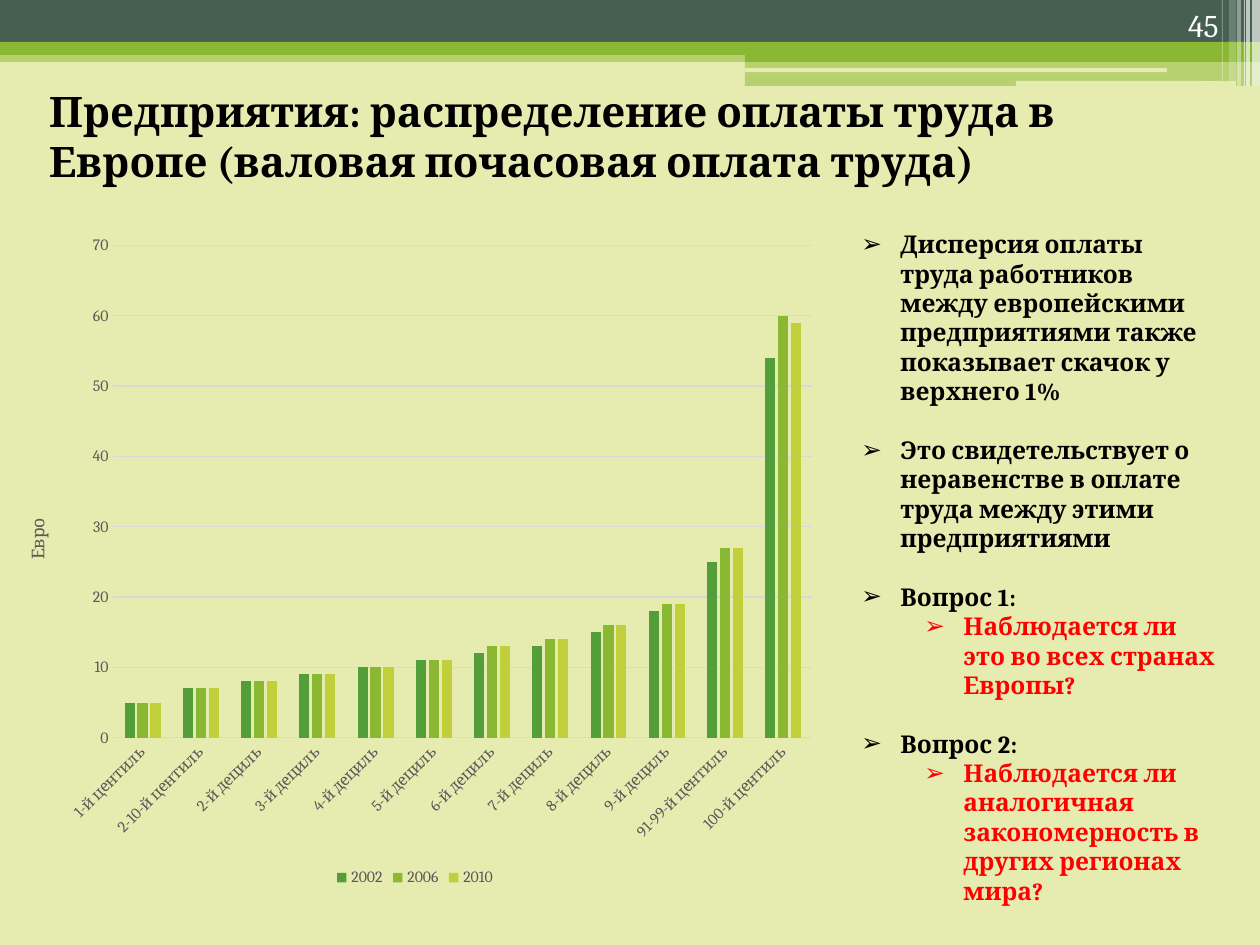
from pptx import Presentation, util as u
from pptx.chart.data import CategoryChartData
from pptx.dml.color import RGBColor
from pptx.enum import chart as ch, shapes, text
from pptx.oxml.ns import qn
from lxml import etree

PX = 914400 / 126
FONT = "Cambria"
COLORS = {
    "paper": "E6ECB0", "dark": "455F51", "lime": "8AB833", "white": "FFFFFF",
    "black": "000000", "red": "FF0000", "grey": "595959", "grid": "D9D9D9",
    "2002": "549E39", "2006": "8AB833", "2010": "C0CF3A",
}
CATEGORIES = (["1-й центиль", "2-10-й центиль"]
              + [f"{n}-й дециль" for n in range(2, 10)]
              + ["91-99-й центиль", "100-й центиль"])
WAGES = {
    "2002": [5, 7, 8, 9, 10, 11, 12, 13, 15, 18, 25, 54],
    "2006": [5, 7, 8, 9, 10, 11, 13, 14, 16, 19, 27, 60],
    "2010": [5, 7, 8, 9, 10, 11, 13, 14, 16, 19, 27, 59],
}
POINTS = [
    ("Дисперсия оплаты труда работников между европейскими предприятиями "
     "также показывает скачок у верхнего 1%", 0, True),
    ("Это свидетельствует о неравенстве в оплате труда между этими предприятиями", 0, True),
    ("Вопрос 1:", 0, False),
    ("Наблюдается ли это во всех странах Европы?", 1, True),
    ("Вопрос 2:", 0, False),
    ("Наблюдается ли аналогичная закономерность в других регионах мира?", 1, False),
]


def emu(px):
    return u.Emu(round(px * PX))


def place(box):
    return [emu(side) for side in box]


def color(name):
    return RGBColor.from_string(COLORS[name])


def style(font, size, name, bold=False):
    font.name, font.size, font.bold = FONT, u.Pt(size), bold
    font.color.rgb = color(name)


def add_bar(page, box, name, alpha=100, kind=shapes.MSO_SHAPE.RECTANGLE):
    bar = page.shapes.add_shape(kind, *place(box))
    bar.shadow.inherit = False
    bar.line.fill.background()
    bar.fill.solid()
    bar.fill.fore_color.rgb = color(name)
    if alpha < 100:
        tint = bar.fill._xPr.find(f".//{qn('a:srgbClr')}")
        etree.SubElement(tint, qn("a:alpha")).set("val", str(alpha * 1000))


def add_banner(page, box):
    left, top, width, height = box
    step = left + 745
    rest = width - 745
    add_bar(page, (left, top + 50, width, 12), "lime", 50)
    add_bar(page, (left, top, width, 43), "dark")
    add_bar(page, (left, top + 42, width, 13), "lime")
    add_bar(page, (step, top + 49, rest, 13), "lime")
    add_bar(page, (step, top + 61, rest, 25), "lime", 50)
    for x, y, length, thick in ((745, 68, 422, 4), (1016, 81, 220, 5)):
        add_bar(page, (left + x, top + y, length, thick), "paper",
                kind=shapes.MSO_SHAPE.ROUNDED_RECTANGLE)
    stripes = ((8, 8, 86, 65), (14, 4, 86, 65), (16, 1, 86, 60),
               (23, 4, 86, 40), (31, 7, 81, 20), (38, 1, 81, 30))
    for inset, thick, tall, alpha in stripes:
        add_bar(page, (left + width - inset, top, thick, tall), "white", alpha)


def add_number(page, box):
    frame = page.shapes.add_textbox(*place(box)).text_frame
    frame.word_wrap = True
    frame.vertical_anchor = text.MSO_ANCHOR.BOTTOM
    frame.text = "45"
    para = frame.paragraphs[0]
    para.alignment = text.PP_ALIGN.RIGHT
    style(para.runs[0].font, 18, "white")


def set_title(page, box):
    title = page.shapes.title
    title.left, title.top, title.width, title.height = place(box)
    frame = title.text_frame
    frame.text = "Предприятия: распределение оплаты труда в Европе (валовая почасовая оплата труда)"
    frame.word_wrap = True
    frame.auto_size = text.MSO_AUTO_SIZE.NONE
    frame.vertical_anchor = text.MSO_ANCHOR.MIDDLE
    frame.margin_left = frame.margin_right = emu(18)
    para = frame.paragraphs[0]
    para.alignment = text.PP_ALIGN.LEFT
    para.line_spacing = 1.0
    para.space_before = u.Pt(0)
    style(para.runs[0].font, 24, "black", True)


def add_points(page, box):
    frame = page.shapes.add_textbox(*place(box)).text_frame
    frame.word_wrap = True
    for index, (words, level, gap) in enumerate(POINTS):
        para = frame.add_paragraph() if index else frame.paragraphs[0]
        para.text = words
        para.level = level
        para.space_after = u.Pt(16.7 if gap else 0)
        style(para.runs[0].font, 14, "red" if level else "black", True)
        props = para._p.get_or_add_pPr()
        props.set("marL", str(emu(102 if level else 39)))
        props.set("indent", str(emu(-39)))
        etree.SubElement(props, qn("a:buFont")).set("typeface", "Wingdings")
        props[-1].set("typeface", "Arial")
        etree.SubElement(props, qn("a:buChar")).set("char", "➢")


def add_wages(page, box):
    data = CategoryChartData()
    data.categories = CATEGORIES
    for year, wages in WAGES.items():
        data.add_series(year, wages)
    chart = page.shapes.add_chart(
        ch.XL_CHART_TYPE.COLUMN_CLUSTERED, *place(box), data).chart
    style(chart.font, 10, "black")
    chart.has_title = False
    chart.has_legend = True
    chart.legend.position = ch.XL_LEGEND_POSITION.BOTTOM
    chart.legend.include_in_layout = False
    style(chart.legend.font, 9, "grey")

    plot = chart.plots[0]
    plot.gap_width, plot.overlap, plot.vary_by_categories = 219, -27, False
    for series in plot.series:
        series.format.fill.solid()
        series.format.fill.fore_color.rgb = color(series.name)

    levels, scale = chart.category_axis, chart.value_axis
    for axis in (levels, scale):
        axis.major_tick_mark = axis.minor_tick_mark = ch.XL_TICK_MARK.NONE
        style(axis.tick_labels.font, 9, "grey")
    levels.tick_labels.font._element.getparent().getparent().getparent().find(
        qn("a:bodyPr")).set("rot", "-2700000")
    scale.minimum_scale, scale.maximum_scale, scale.major_unit = 0, 70, 10
    scale.has_major_gridlines = True
    scale.format.line.fill.background()
    for line in (levels.format.line, scale.major_gridlines.format.line):
        line.color.rgb = color("grid")
        line.width = u.Pt(0.75)
    label = scale.axis_title.text_frame
    label.text = "Евро"
    style(label.paragraphs[0].runs[0].font, 10, "grey")


def main():
    deck = Presentation()
    deck.slide_width, deck.slide_height = emu(1260), emu(945)
    page = deck.slides.add_slide(deck.slide_layouts[5])
    page.background.fill.solid()
    page.background.fill.fore_color.rgb = color("paper")
    add_banner(page, (0, 0, 1260, 86))
    add_number(page, (1126, 0, 105, 50))
    set_title(page, (31, 82, 1124, 107))
    add_points(page, (849, 223, 383, 696))
    add_wages(page, (1, 223, 828, 669))
    deck.save("out.pptx")


if __name__ == "__main__":
    main()
